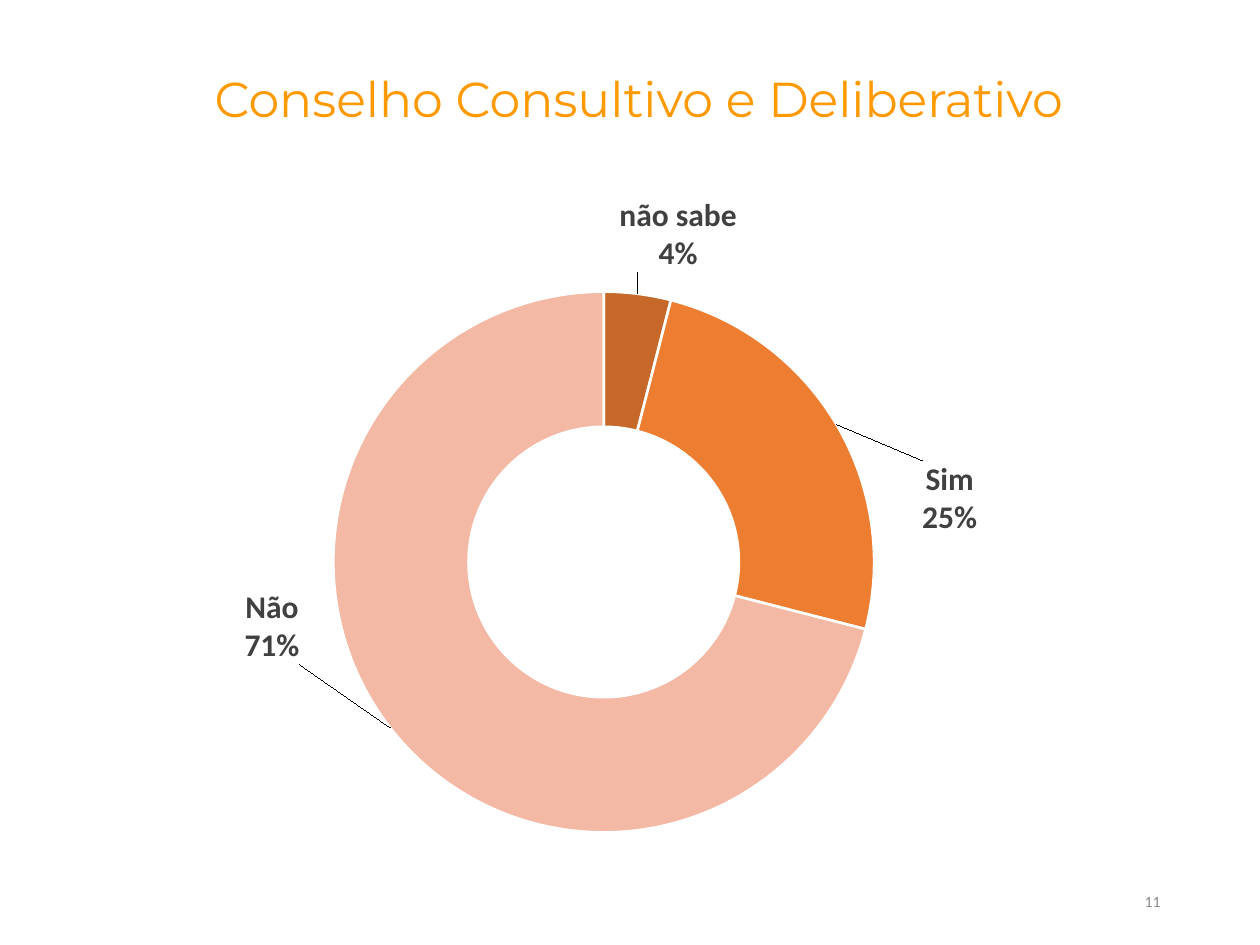
from pptx import Presentation
from pptx.chart.data import CategoryChartData
from pptx.dml.color import RGBColor
from pptx.enum.chart import XL_CHART_TYPE
from pptx.enum.text import MSO_ANCHOR, PP_ALIGN
from pptx.oxml import parse_xml
from pptx.oxml.ns import nsdecls, qn
from pptx.util import Inches, Pt

DOUGHNUT = XL_CHART_TYPE.DOUGHNUT
MIDDLE = MSO_ANCHOR.MIDDLE
CENTER, RIGHT = PP_ALIGN.CENTER, PP_ALIGN.RIGHT
WHITE = RGBColor(0xFF, 0xFF, 0xFF)
AMBER = RGBColor(0xFF, 0x99, 0x00)
GREY = RGBColor(0x8C, 0x8C, 0x8C)
CHARCOAL = RGBColor(0x40, 0x40, 0x40)
BROWN = RGBColor(0xC5, 0x68, 0x29)
ORANGE = RGBColor(0xED, 0x7D, 0x31)
PEACH = RGBColor(0xF3, 0xB9, 0xA4)

ANSWERS = [
    ("não sabe", 4, BROWN, (0.04, -0.19)),
    ("Sim", 25, ORANGE, (0.14, 0.06)),
    ("Não", 71, PEACH, (-0.14, -0.09)),
]
PLOT_BOX = (0.234, 0.16, 0.518, 0.813)


def inches(box):
    return [Inches(v) for v in box]


def write(shape, text, font, size, color, align):
    tf = shape.text_frame
    tf.word_wrap = True
    tf.vertical_anchor = MIDDLE
    p = tf.paragraphs[0]
    p.text = text
    p.alignment = align
    p.font.name, p.font.size = font, Pt(size)
    p.font.color.rgb = color
    return p


def add_title(s, box):
    title = s.shapes.title
    title.left, title.top, title.width, title.height = inches(box)
    p = write(title, "Conselho Consultivo e Deliberativo", "Montserrat", 28, AMBER, CENTER)
    p.line_spacing = 0.9


def add_page_number(s, box):
    write(s.shapes.add_textbox(*inches(box)), "11", "Calibri", 9, GREY, RIGHT)


def manual_layout(position, inner=False):
    target = '<c:layoutTarget val="inner"/><c:xMode val="edge"/><c:yMode val="edge"/>' if inner else ""
    parts = "".join(f'<c:{k} val="{v}"/>' for k, v in zip("xywh", position))
    return parse_xml(
        f'<c:layout {nsdecls("c")}><c:manualLayout>{target}{parts}</c:manualLayout></c:layout>'
    )


def style_font(font):
    font.name, font.size, font.bold = "Calibri", Pt(18), True
    font.color.rgb = CHARCOAL


def show_category_and_percent(labels):
    for tag, shown in (("showVal", 0), ("showCatName", 1), ("showPercent", 1)):
        labels.find(qn(f"c:{tag}")).set("val", str(shown))
    separator = parse_xml(f'<c:separator {nsdecls("c")}>\n</c:separator>')
    labels.find(qn("c:showBubbleSize")).addnext(separator)


def add_doughnut(s, box):
    data = CategoryChartData()
    data.categories = [name for name, *_ in ANSWERS]
    data.add_series("Series 1", [value for _, value, *_ in ANSWERS])
    chart = s.shapes.add_chart(DOUGHNUT, *inches(box), data).chart
    chart.has_legend = chart.has_title = False
    chart.font.name, chart.font.size = "Calibri", Pt(10)

    plot = chart.plots[0]
    plot.vary_by_categories = True
    series = plot.series[0]
    style_font(series.data_labels.font)
    dLbls = series._element.find(qn("c:dLbls"))
    show_category_and_percent(dLbls)
    for i, (_, _, color, offset) in enumerate(ANSWERS):
        point = series.points[i]
        point.format.fill.solid()
        point.format.fill.fore_color.rgb = color
        point.format.line.color.rgb = WHITE
        point.format.line.width = Pt(1.5)
        style_font(point.data_label.font)
        dLbl = dLbls.findall(qn("c:dLbl"))[i]
        dLbl.find(qn("c:idx")).addnext(manual_layout(offset))
        show_category_and_percent(dLbl)

    area = chart._chartSpace.chart.plotArea
    for layout in area.findall(qn("c:layout")):
        area.remove(layout)
    area.insert(0, manual_layout(PLOT_BOX, inner=True))
    area.find(".//" + qn("c:holeSize")).set("val", "50")


def main():
    prs = Presentation()
    prs.slide_width, prs.slide_height = Inches(10), Inches(7.5)
    s = prs.slides.add_slide(prs.slide_layouts[5])
    add_title(s, (0.42, 0, 9.3, 1.62))
    add_page_number(s, (7.06, 6.95, 2.25, 0.4))
    add_doughnut(s, (0, 1.47, 9.72, 5.28))
    prs.save("out.pptx")


if __name__ == "__main__":
    main()
